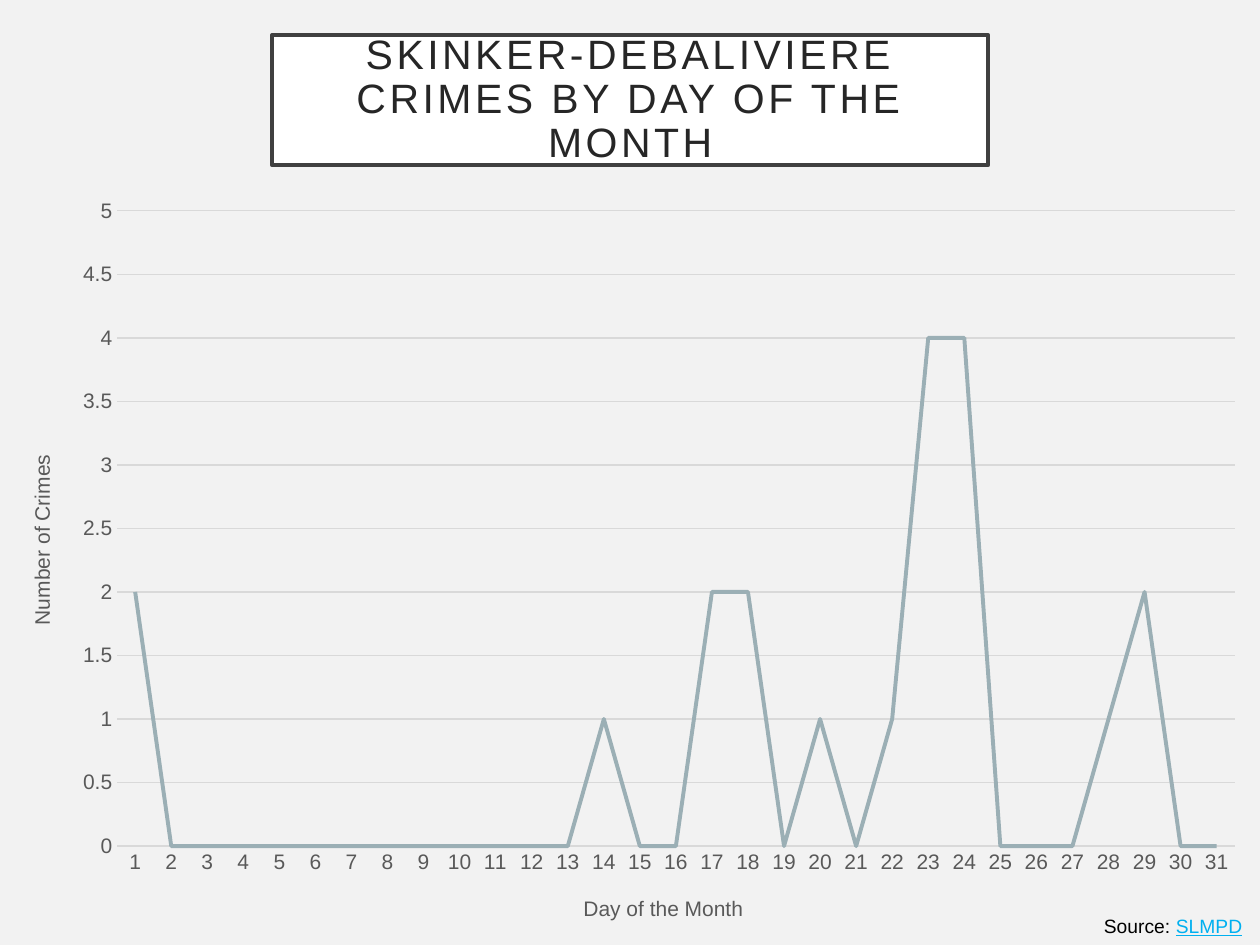
from dataclasses import dataclass, field
from typing import Any
from lxml import etree
from pptx import Presentation
from pptx.chart.data import CategoryChartData
from pptx.dml.color import RGBColor
from pptx.enum.chart import XL_CHART_TYPE, XL_MARKER_STYLE, XL_TICK_MARK
from pptx.enum.shapes import MSO_SHAPE
from pptx.enum.text import MSO_ANCHOR, MSO_AUTO_SIZE, PP_ALIGN
from pptx.util import Cm, Pt

LINE = XL_CHART_TYPE.LINE
NO_MARK = XL_MARKER_STYLE.NONE
NO_TICK = XL_TICK_MARK.NONE
RECT = MSO_SHAPE.RECTANGLE
MIDDLE = MSO_ANCHOR.MIDDLE
FIXED = MSO_AUTO_SIZE.NONE
GROW = MSO_AUTO_SIZE.SHAPE_TO_FIT_TEXT
CENTER = PP_ALIGN.CENTER

BACK = RGBColor(0xF2, 0xF2, 0xF2)
WHITE = RGBColor(0xFF, 0xFF, 0xFF)
FRAME = RGBColor(0x40, 0x40, 0x40)
INK = RGBColor(0x26, 0x26, 0x26)
BLACK = RGBColor(0, 0, 0)
BLUE = RGBColor(0x00, 0xB0, 0xF0)
GRAY = RGBColor(0x59, 0x59, 0x59)
GRID = RGBColor(0xD9, 0xD9, 0xD9)
SAGE = RGBColor(0x9B, 0xAF, 0xB5)

FONT = "Arial"
NS = "{http://schemas.openxmlformats.org/drawingml/2006/chart}"
DAYS = 31
CRIMES = {1: 2, 14: 1, 17: 2, 18: 2, 20: 1, 22: 1, 23: 4, 24: 4, 28: 1, 29: 2}


@dataclass
class Scale:
    axis: Any
    title: str
    place: dict[str, float]
    form: dict[str, Any] = field(default_factory=dict)


def apply(item: Any, form: dict[str, Any]) -> None:
    for name, value in form.items():
        setattr(item, name, value)


def style(font: Any, size: float, color: RGBColor, **more: Any) -> None:
    apply(font, {"name": FONT, "size": Pt(size), "bold": False, **more})
    font.color.rgb = color


def stroke(line: Any, color: RGBColor, width: float) -> None:
    line.color.rgb = color
    line.width = Pt(width)


def lay_out(host: Any, place: dict[str, float]) -> None:
    node = host.find(NS + "layout")
    if node is None:
        node = etree.Element(NS + "layout")
        host.insert(0, node)
    manual = etree.SubElement(node, NS + "manualLayout")
    if "w" in place:
        etree.SubElement(manual, NS + "layoutTarget", val="inner")
    for key in "xy":
        etree.SubElement(manual, NS + key + "Mode", val="edge")
    for key, value in place.items():
        etree.SubElement(manual, NS + key, val=str(value))


def draw_scale(scale: Scale) -> None:
    axis = scale.axis
    apply(axis, {"major_tick_mark": NO_TICK, "minor_tick_mark": NO_TICK, **scale.form})
    style(axis.tick_labels.font, 12, GRAY)
    title = axis.axis_title
    run = title.text_frame.paragraphs[0].add_run()
    run.text = scale.title
    style(run.font, 12, GRAY)
    lay_out(title._element, scale.place)


def draw_chart(slide: Any) -> None:
    data = CategoryChartData()
    data.categories = [str(day) for day in range(1, DAYS + 1)]
    data.add_series("Series 1", [CRIMES.get(day, 0) for day in range(1, DAYS + 1)])
    frame = slide.shapes.add_chart(LINE, Cm(0), Cm(3.73), Cm(25.4), Cm(15.32), data)
    chart = frame.chart
    apply(chart, {"has_legend": False, "has_title": False})
    style(chart.font, 12, BLACK)

    days, counts = chart.category_axis, chart.value_axis
    draw_scale(Scale(days, "Day of the Month", {"x": 0.46, "y": 0.93}))
    draw_scale(Scale(counts, "Number of Crimes", {"x": 0.02, "y": 0.35},
                     {"minimum_scale": 0, "maximum_scale": 5, "major_unit": 0.5}))
    counts.axis_title.text_frame._txBody.bodyPr.set("rot", "-5400000")
    counts.format.line.fill.background()
    stroke(days.format.line, GRID, 0.75)
    stroke(counts.major_gridlines.format.line, GRID, 0.75)

    plot = chart.plots[0]
    plot.vary_by_categories = False
    crimes = plot.series[0]
    crimes.smooth = False
    crimes.marker.style = NO_MARK
    stroke(crimes.format.line, SAGE, 2.25)
    area = chart._chartSpace.chart.plotArea
    lay_out(area, {"x": 0.093, "y": 0.034, "w": 0.887, "h": 0.836})


def draw_title(slide: Any) -> None:
    box = slide.shapes.add_shape(RECT, Cm(5.49), Cm(0.71), Cm(14.43), Cm(2.62))
    box.shadow.inherit = False
    box.fill.solid()
    box.fill.fore_color.rgb = WHITE
    stroke(box.line, FRAME, 2.5)
    frame = box.text_frame
    sides = ("left", "top", "right", "bottom")
    apply(frame, {f"margin_{side}": Cm(0.51) for side in sides})
    apply(frame, {"word_wrap": True, "auto_size": FIXED, "vertical_anchor": MIDDLE})
    para = frame.paragraphs[0]
    para.text = "SKINKER-DEBALIVIERE\vCRIMES BY DAY OF THE MONTH"
    apply(para, {"alignment": CENTER, "line_spacing": 0.9})
    for run in para.runs:
        style(run.font, 23.4, INK)
        run._r.get_or_add_rPr().set("spc", "200")


def draw_source(slide: Any) -> None:
    box = slide.shapes.add_textbox(Cm(22), Cm(18.31), Cm(3.3), Cm(0.74))
    apply(box.text_frame, {"word_wrap": True, "auto_size": GROW})
    para = box.text_frame.paragraphs[0]
    para.alignment = CENTER
    for text, color, under in (("Source: ", BLACK, False), ("SLMPD", BLUE, True)):
        run = para.add_run()
        run.text = text
        style(run.font, 11, color, underline=under)


def main() -> None:
    deck = Presentation()
    apply(deck, {"slide_width": Cm(25.4), "slide_height": Cm(19.05)})
    slide = deck.slides.add_slide(deck.slide_layouts[6])
    slide.background.fill.solid()
    slide.background.fill.fore_color.rgb = BACK
    draw_source(slide)
    draw_title(slide)
    draw_chart(slide)
    deck.save("out.pptx")


if __name__ == "__main__":
    main()
